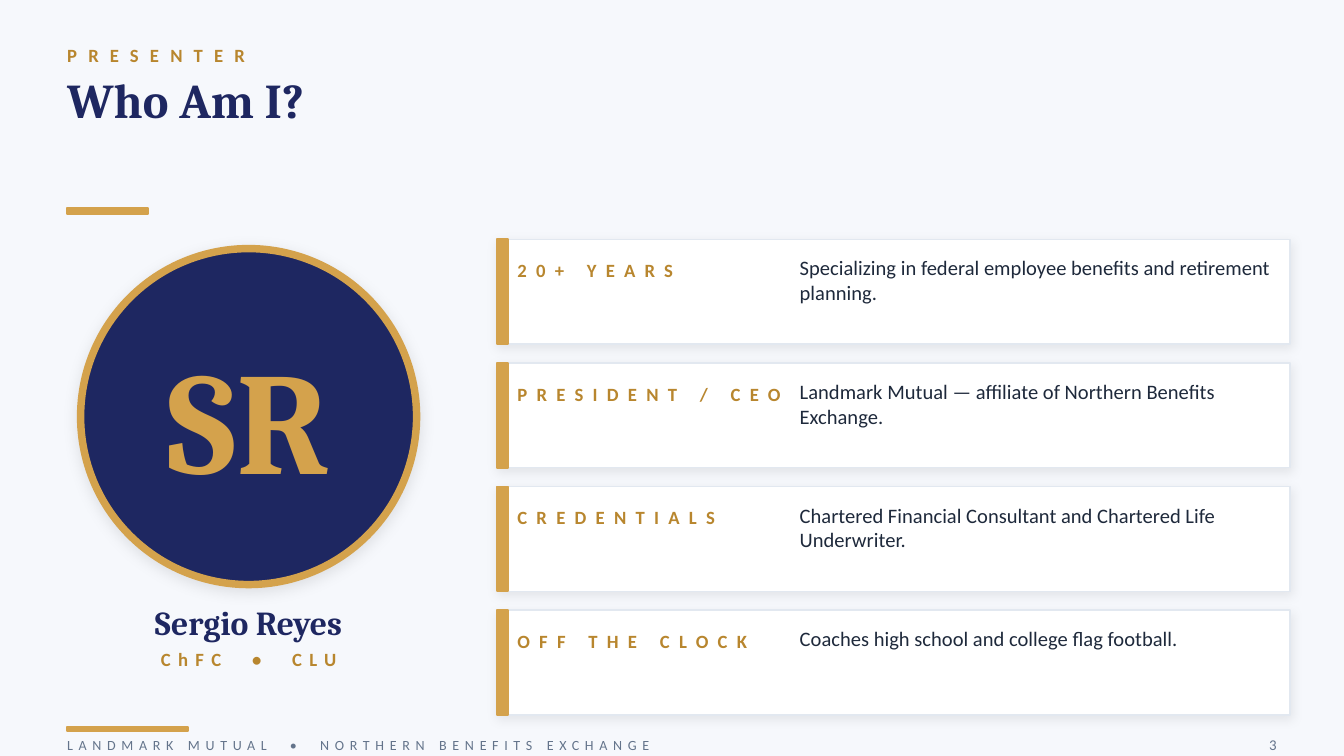
from lxml.etree import SubElement
from pptx import Presentation
from pptx.dml.color import RGBColor
from pptx.enum.shapes import MSO_SHAPE
from pptx.enum.text import MSO_ANCHOR, MSO_AUTO_SIZE, PP_ALIGN
from pptx.oxml.ns import qn
from pptx.util import Pt

PX = 4572  # EMU, 200 px to the inch
COLORS = {
    "background": "F6F8FC", "navy": "1E2761", "gold": "D4A24C",
    "dark_gold": "B8862E", "white": "FFFFFF", "border": "E2E8F0",
    "body": "1E293B", "muted": "64748B", "shadow": "000000",
}
FACTS = [
    ("20+ YEARS", "Specializing in federal employee benefits and retirement planning."),
    ("PRESIDENT / CEO", "Landmark Mutual — affiliate of Northern Benefits Exchange."),
    ("CREDENTIALS", "Chartered Financial Consultant and Chartered Life Underwriter."),
    ("OFF THE CLOCK", "Coaches high school and college flag football."),
]


def color(name):
    return RGBColor.from_string(COLORS[name])


def emu(*lengths):
    return [length * PX for length in lengths]


def format_text(shape, size, color_name, font="Calibri", bold=False, spacing=0,
                align=PP_ALIGN.LEFT, anchor=MSO_ANCHOR.MIDDLE):
    """Format the frame and runs; a run of one space makes a double-width gap."""
    frame = shape.text_frame
    frame.word_wrap = True
    frame.auto_size = MSO_AUTO_SIZE.NONE
    frame.vertical_anchor = anchor
    frame.margin_left = frame.margin_right = frame.margin_top = frame.margin_bottom = 0
    paragraph = frame.paragraphs[0]
    paragraph.alignment = align
    for run in paragraph.runs:
        run.font.size = Pt(size)
        run.font.name = font
        run.font.bold = bold
        run.font.color.rgb = color(color_name)
        if spacing:
            gap = 2 * spacing + 0.226 * size if run.text == " " else spacing
            run.font._element.set("spc", str(round(gap * 100)))


def add_text(slide, box, pieces, size, color_name, **style):
    """Add a text box; pieces is one string or a list of run texts."""
    shape = slide.shapes.add_textbox(*emu(*box))
    for piece in [pieces] if isinstance(pieces, str) else pieces:
        shape.text_frame.paragraphs[0].add_run().text = piece
    format_text(shape, size, color_name, **style)


def add_panel(slide, kind, box, fill, line, width, shadow=None):
    """Add a filled shape; shadow is (opacity %, blur pt, distance pt)."""
    shape = slide.shapes.add_shape(kind, *emu(*box))
    shape.fill.solid()
    shape.fill.fore_color.rgb = color(fill)
    shape.line.color.rgb = color(line)
    shape.line.width = Pt(width)
    shape.shadow.inherit = False
    if shadow:
        opacity, blur, distance = shadow
        effects = shape._element.spPr.find(qn("a:effectLst"))
        outer = SubElement(effects, qn("a:outerShdw"), blurRad=str(Pt(blur)),
                           dist=str(Pt(distance)), dir="5400000",
                           algn="bl", rotWithShape="0")
        tint = SubElement(outer, qn("a:srgbClr"), val=COLORS["shadow"])
        SubElement(tint, qn("a:alpha"), val=str(opacity * 1000))


def add_gold_bar(slide, box):
    add_panel(slide, MSO_SHAPE.RECTANGLE, box, "gold", "gold", 1)


def add_header(slide, left, top):
    add_text(slide, (left, top, 1800, 52), "PRESENTER", 10, "dark_gold",
             bold=True, spacing=6)
    title = slide.shapes.title
    title.left, title.top, title.width, title.height = emu(left, top + 48, 1840, 200)
    title.text_frame.text = "Who Am I?"
    format_text(title, 26, "navy", font="Cambria", bold=True, anchor=MSO_ANCHOR.TOP)
    add_gold_bar(slide, (left, top + 254, 120, 8))


def add_profile(slide, left, top, width):
    diameter = 500
    circle = (left + (width - diameter) // 2, top, diameter, diameter)
    centered = {"bold": True, "align": PP_ALIGN.CENTER}
    add_panel(slide, MSO_SHAPE.OVAL, circle, "navy", "gold", 4, shadow=(10, 8, 2))
    add_text(slide, circle, "SR", 78, "gold", font="Cambria", **centered)
    add_text(slide, (left, top + 520, width, 70), "Sergio Reyes", 18, "navy",
             font="Cambria", **centered)
    add_text(slide, (left, top + 586, width, 50), ["ChFC", " ", "•", " ", "CLU"],
             10, "dark_gold", spacing=4, **centered)


def add_fact_card(slide, left, top, width, height, label, detail):
    add_panel(slide, MSO_SHAPE.RECTANGLE, (left, top, width, height),
              "white", "border", 0.75, shadow=(8, 6, 1.5))
    add_gold_bar(slide, (left, top, 16, height))
    add_text(slide, (left + 30, top + 16, 400, 60), label, 10, "dark_gold",
             bold=True, spacing=5)
    add_text(slide, (left + 450, top + 24, width - 470, 110), detail, 11, "body",
             anchor=MSO_ANCHOR.TOP)


def add_footer(slide, left, top, width):
    add_gold_bar(slide, (left, top, 180, 6))
    organizations = ["LANDMARK MUTUAL", " ", "•", " ", "NORTHERN BENEFITS EXCHANGE"]
    add_text(slide, (left, top + 8, 1200, 36), organizations, 7.5, "muted", spacing=3)
    add_text(slide, (left + width - 100, top + 8, 100, 36), "3", 8, "muted",
             align=PP_ALIGN.RIGHT)


def main():
    presentation = Presentation()
    presentation.slide_width, presentation.slide_height = emu(2000, 1125)
    slide = presentation.slides.add_slide(presentation.slide_layouts[5])
    slide.background.fill.solid()
    slide.background.fill.fore_color.rgb = color("background")

    add_header(slide, 100, 56)
    add_profile(slide, 70, 370, 600)
    for index, (label, detail) in enumerate(FACTS):
        add_fact_card(slide, 740, 356 + index * 184, 1180, 156, label, detail)
    add_footer(slide, 100, 1082, 1800)
    presentation.save("out.pptx")


if __name__ == "__main__":
    main()
